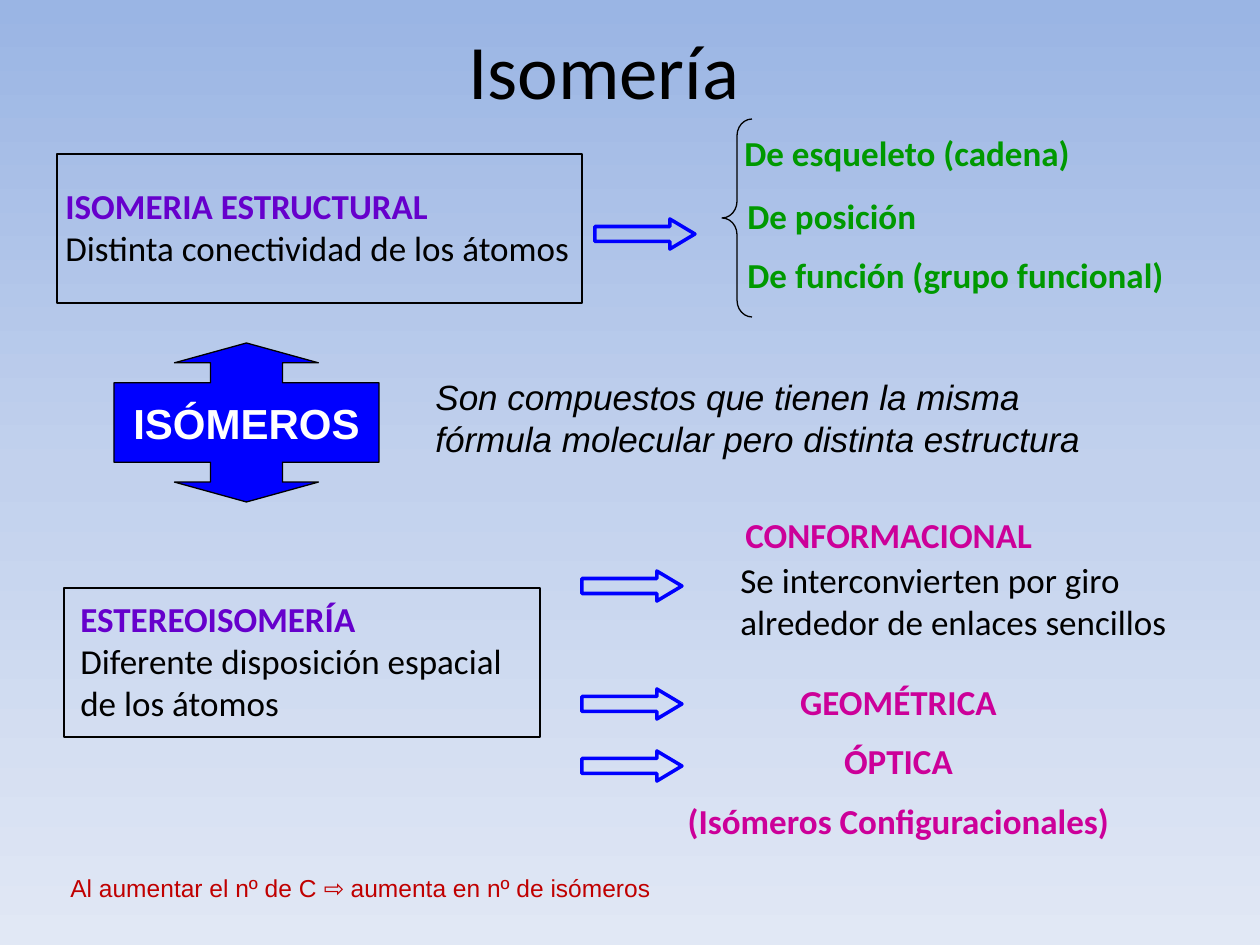
"""Builds a slide that classifies the kinds of isomerism."""
from copy import deepcopy

from pptx import Presentation
from pptx.dml.color import RGBColor
from pptx.enum.shapes import MSO_SHAPE as Shape
from pptx.enum.text import MSO_ANCHOR as Anchor, PP_ALIGN as Align
from pptx.oxml.ns import qn
from pptx.util import Emu, Pt

PIXEL = 914400 / 126
COLORS = {
    "black": "000000", "white": "FFFFFF", "blue": "0000FF",
    "purple": "6600CC", "green": "009900", "magenta": "CC0099", "red": "C00000",
    "sky top": "9AB5E4", "sky middle": "C2D1ED", "sky bottom": "E1E8F5",
}


def color(name):
    return RGBColor.from_string(COLORS[name])


def px(*lengths):
    return [Emu(round(length * PIXEL)) for length in lengths]


class SlideBuilder:
    def __init__(self, slide, font="Calibri", size=20):
        self.slide = slide
        self.font = font
        self.size = size

    def background(self, top, middle, bottom):
        fill = self.slide.background.fill
        fill.gradient()
        fill.gradient_angle = 270
        stop_list = self.slide.element.find(".//" + qn("a:gsLst"))
        stop_list.insert(1, deepcopy(stop_list[0]))
        for stop, name, position in zip(fill.gradient_stops, (top, middle, bottom), (0, 0.5, 1)):
            stop.color.rgb = color(name)
            stop.position = position

    def place(self, shape, box):
        shape.left, shape.top, shape.width, shape.height = px(*box)

    def style(self, paragraph, name, size=None, font=None, bold=False, italic=False):
        for run in paragraph.runs:
            run.font.name = font or self.font
            run.font.size = Pt(size or self.size)
            run.font.bold = bold
            run.font.italic = italic
            run.font.color.rgb = color(name)

    def title(self, box, text):
        title = self.slide.shapes.title
        self.place(title, box)
        title.text_frame.text = text
        title.text_frame.vertical_anchor = Anchor.MIDDLE
        title.text_frame.paragraphs[0].alignment = Align.CENTER
        self.style(title.text_frame.paragraphs[0], "black", 44)

    def text(self, box, text, name, align=Align.LEFT, gap=0, wrap=True, **style):
        frame = self.slide.shapes.add_textbox(*px(*box)).text_frame
        frame.word_wrap = wrap
        frame.text = text
        for index, paragraph in enumerate(frame.paragraphs):
            paragraph.alignment = align
            paragraph.space_before = Pt(gap if index else 0)
            self.style(paragraph, name, **style)
        return frame

    def definition(self, box, heading, description):
        frame = self.text(box, f"{heading}\n{description}", "black")
        self.style(frame.paragraphs[0], "purple", bold=True)

    def shape(self, kind, box, line="black", width=0.75, fill=None, adjustments=()):
        shape = self.slide.shapes.add_shape(kind, *px(*box))
        shape.shadow.inherit = False
        shape.line.color.rgb = color(line)
        shape.line.width = Pt(width)
        if fill:
            shape.fill.solid()
            shape.fill.fore_color.rgb = color(fill)
        else:
            shape.fill.background()
        for index, value in enumerate(adjustments):
            shape.adjustments[index] = value
        return shape

    def arrow(self, left, top):
        self.shape(Shape.RIGHT_ARROW, (left, top, 100, 30), "blue", 2, adjustments=(0.5, 0.835))

    def callout(self, box, text):
        shape = self.shape(Shape.UP_DOWN_ARROW_CALLOUT, box, fill="blue",
                           adjustments=(0.453, 0.453, 0.125, 0.5))
        frame = shape.text_frame
        frame.text = text
        frame.word_wrap = False
        frame.vertical_anchor = Anchor.MIDDLE
        frame.paragraphs[0].alignment = Align.CENTER
        self.style(frame.paragraphs[0], "white", 24, "Arial", bold=True)


def main():
    presentation = Presentation()
    presentation.slide_width, presentation.slide_height = px(1260, 945)
    builder = SlideBuilder(presentation.slides.add_slide(presentation.slide_layouts[5]))
    builder.background("sky top", "sky middle", "sky bottom")
    builder.title((37, -10, 1134, 158), "Isomería")

    builder.shape(Shape.RECTANGLE, (57, 154, 525, 149))
    builder.definition((53, 178, 586, 97), "ISOMERIA ESTRUCTURAL",
                       "Distinta conectividad de los átomos")
    builder.arrow(595, 219)
    builder.shape(Shape.LEFT_BRACE, (722, 119, 30, 198), adjustments=(0.556, 0.5))
    for left, top, width, kind in (
        (732, 125, 401, "De esqueleto (cadena)"),
        (735, 188, 226, "De posición"),
        (735, 247, 508, "De función (grupo funcional)"),
    ):
        builder.text((left, top, width, 55), kind, "green", wrap=False, bold=True)

    builder.callout((114, 343, 265, 159), "ISÓMEROS")
    builder.text((423, 369, 713, 97),
                 "Son compuestos que tienen la misma fórmula molecular pero distinta estructura",
                 "black", font="Arial", italic=True)

    builder.shape(Shape.RECTANGLE, (64, 588, 476, 149))
    builder.definition((68, 591, 466, 140), "ESTEREOISOMERÍA",
                       "Diferente disposición espacial de los átomos")
    for top in (571, 689, 751):
        builder.arrow(582, top)
    builder.text((733, 507, 437, 55), "CONFORMACIONAL", "magenta", bold=True)
    builder.text((728, 552, 462, 97),
                 "Se interconvierten por giro alrededor de enlaces sencillos", "black")
    builder.text((664, 674, 469, 183), "GEOMÉTRICA\nÓPTICA\n(Isómeros Configuracionales)",
                 "magenta", Align.CENTER, gap=10, bold=True)

    builder.text((58, 867, 610, 43), "Al aumentar el nº de C ⇨ aumenta en nº de isómeros",
                 "red", wrap=False, size=14, font="Arial")
    presentation.save("out.pptx")


if __name__ == "__main__":
    main()
